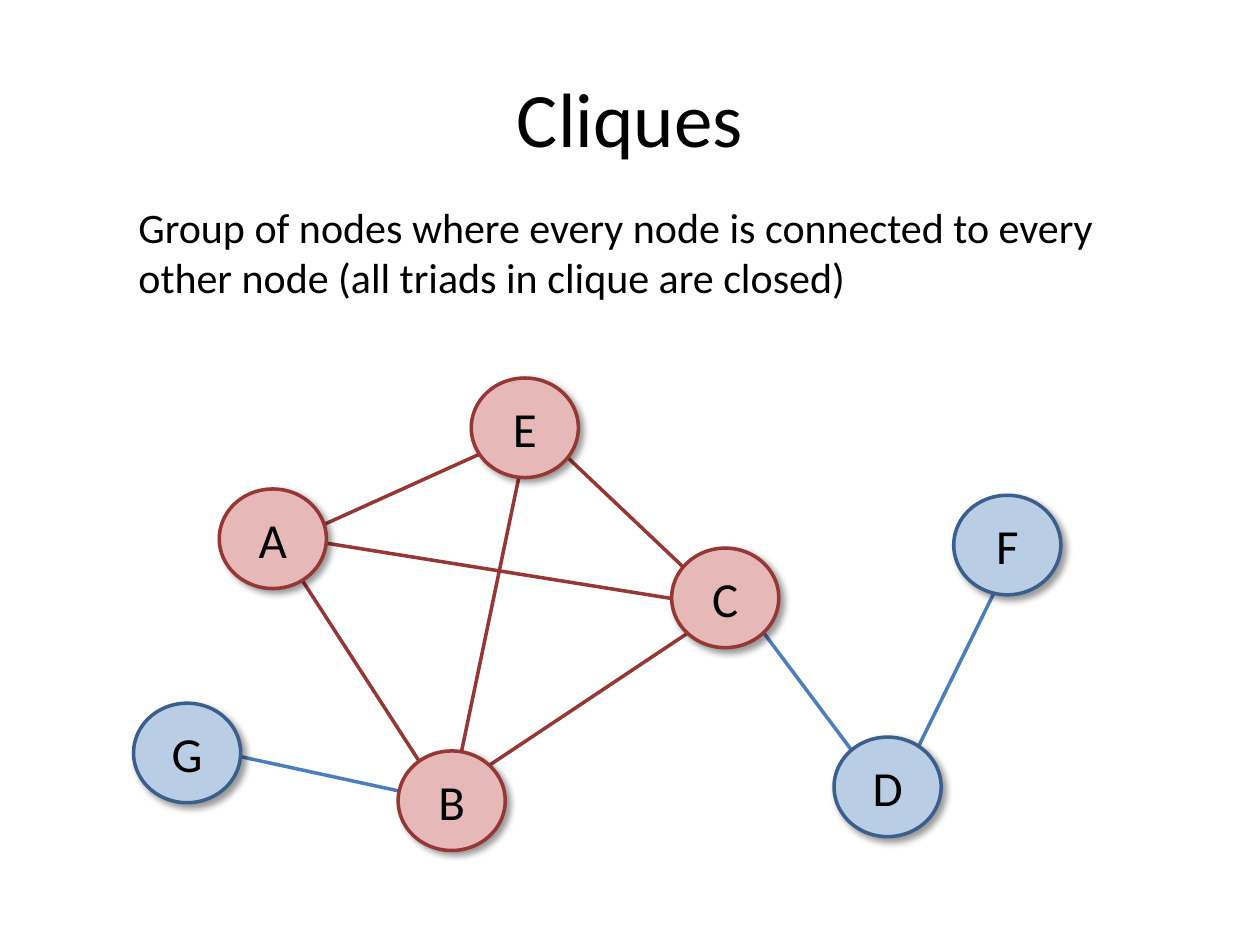
import pptx
import pptx.util
import pptx.dml.color
import pptx.enum.shapes
import pptx.enum.text
import pptx.oxml
import pptx.oxml.ns

Pt = pptx.util.Pt
RED, BLUE = "953735", "4B7EBC"
PINK, PALE, NAVY = "E6B9B8", "B9CDE5", "3A5F8C"

SHADOW = (
    f'<a:effectLst {pptx.oxml.ns.nsdecls("a")}>'
    '<a:outerShdw blurRad="50800" dist="38100" dir="2700000" rotWithShape="0">'
    '<a:srgbClr val="000000"><a:alpha val="40000"/></a:srgbClr>'
    '</a:outerShdw></a:effectLst>'
)
PLAIN = f'<a:effectLst {pptx.oxml.ns.nsdecls("a")}/>'

# Label, left, top, whether it belongs to the clique
NODES = [
    ("F", 545, 283, False),
    ("D", 476.6, 421.2, False),
    ("C", 383.8, 313.2, True),
    ("E", 269.3, 216, True),
    ("A", 125.3, 279.4, True),
    ("B", 227.5, 429.1, True),
    ("G", 76.3, 401.8, False),
]

# Start, end, colour
EDGES = [
    ((167.8, 324), (245.5, 444.2), RED),
    ((167.8, 307.4), (383.8, 342), RED),
    ((392.4, 362.2), (269.3, 444.2), RED),
    ((425.5, 347), (506.9, 455.8), BLUE),
    ((317.5, 254.9), (401.8, 334.8), RED),
    ((158.4, 311.8), (300.2, 247.7), RED),
    ((261.4, 440.6), (301, 251.3), RED),
    ((115.9, 427.7), (245.5, 455.8), BLUE),
    ((575.3, 324), (510.5, 455.8), BLUE),
]


def color(code):
    return pptx.dml.color.RGBColor.from_string(code)


class Sketch:
    """Holds the slide and the style its elements share."""

    font, ink, stroke = "Calibri", "000000", 2
    wide, high = 61.2, 56.9

    def __init__(self, slide):
        self.slide = slide

    def label(self, shape, text, size, align, anchor):
        frame = shape.text_frame
        frame.text = text
        frame.word_wrap = True
        frame.vertical_anchor = anchor
        para = frame.paragraphs[0]
        para.alignment = align
        para.font.name = self.font
        para.font.size = Pt(size)
        para.font.color.rgb = color(self.ink)
        return frame

    def center(self, shape, text, size):
        self.label(shape, text, size, pptx.enum.text.PP_ALIGN.CENTER,
                   pptx.enum.text.MSO_ANCHOR.MIDDLE)

    def title(self, text, left, top, width, height):
        shape = self.slide.shapes.title
        shape.left, shape.top = Pt(left), Pt(top)
        shape.width, shape.height = Pt(width), Pt(height)
        self.center(shape, text, 44)

    def note(self, text, left, top, width, height):
        box = self.slide.shapes.add_textbox(
            Pt(left), Pt(top), Pt(width), Pt(height))
        frame = self.label(box, text, 24, pptx.enum.text.PP_ALIGN.LEFT,
                           pptx.enum.text.MSO_ANCHOR.TOP)
        frame.auto_size = pptx.enum.text.MSO_AUTO_SIZE.SHAPE_TO_FIT_TEXT

    def outline(self, shape, code, effect):
        shape.line.color.rgb = color(code)
        shape.line.width = Pt(self.stroke)
        shape._element.spPr.append(pptx.oxml.parse_xml(effect))

    def edge(self, start, end, code):
        line = self.slide.shapes.add_connector(
            pptx.enum.shapes.MSO_CONNECTOR.STRAIGHT,
            *(Pt(n) for n in start + end))
        self.outline(line, code, PLAIN)

    def node(self, name, left, top, clique):
        oval = self.slide.shapes.add_shape(
            pptx.enum.shapes.MSO_SHAPE.OVAL,
            Pt(left), Pt(top), Pt(self.wide), Pt(self.high))
        oval.fill.solid()
        oval.fill.fore_color.rgb = color(PINK if clique else PALE)
        self.outline(oval, RED if clique else NAVY, SHADOW)
        self.center(oval, name, 28)


def main():
    deck = pptx.Presentation()
    deck.slide_width, deck.slide_height = Pt(720), Pt(540)
    sketch = Sketch(deck.slides.add_slide(deck.slide_layouts[5]))
    sketch.title("Cliques", 36, 21.6, 648, 90)
    sketch.note("Group of nodes where every node is connected to every "
                "other node (all triads in clique are closed)",
                72, 111.6, 570.2, 65.5)
    for edge in EDGES:
        sketch.edge(*edge)
    for node in NODES:
        sketch.node(*node)
    deck.save("out.pptx")


if __name__ == "__main__":
    main()
